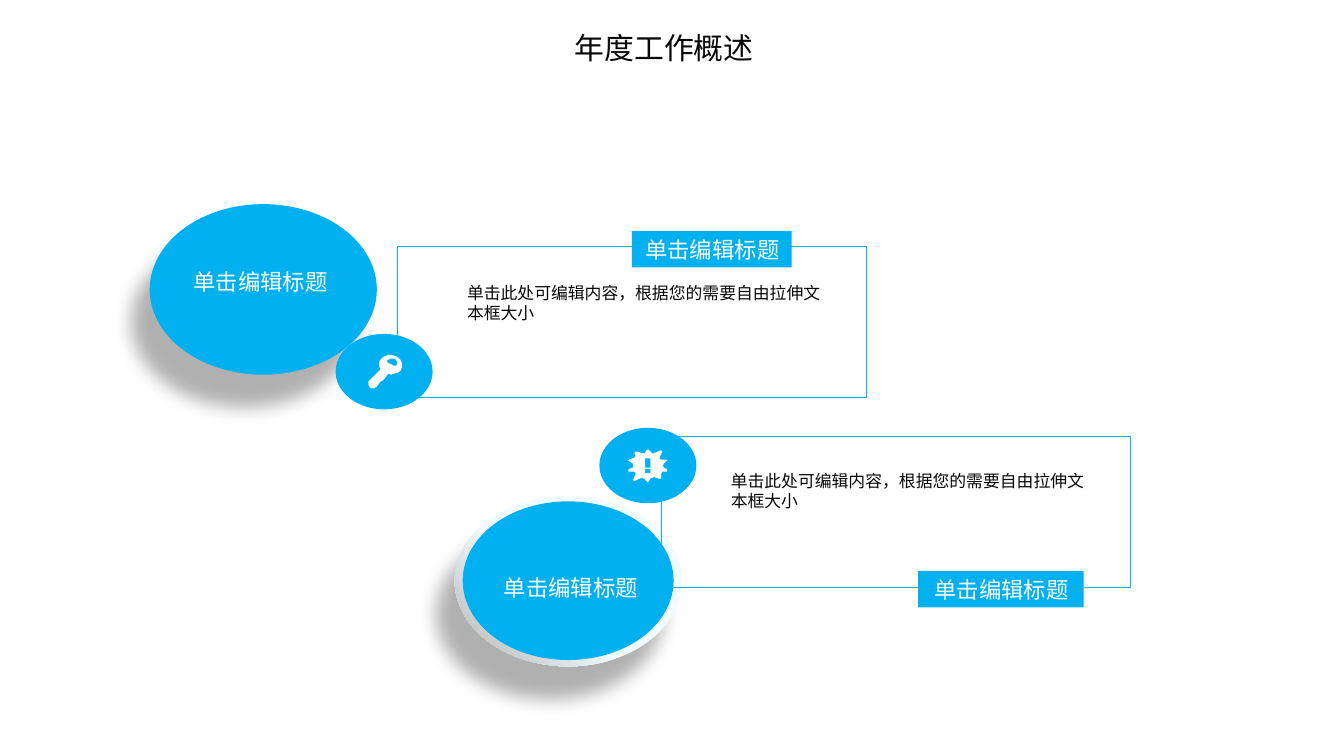
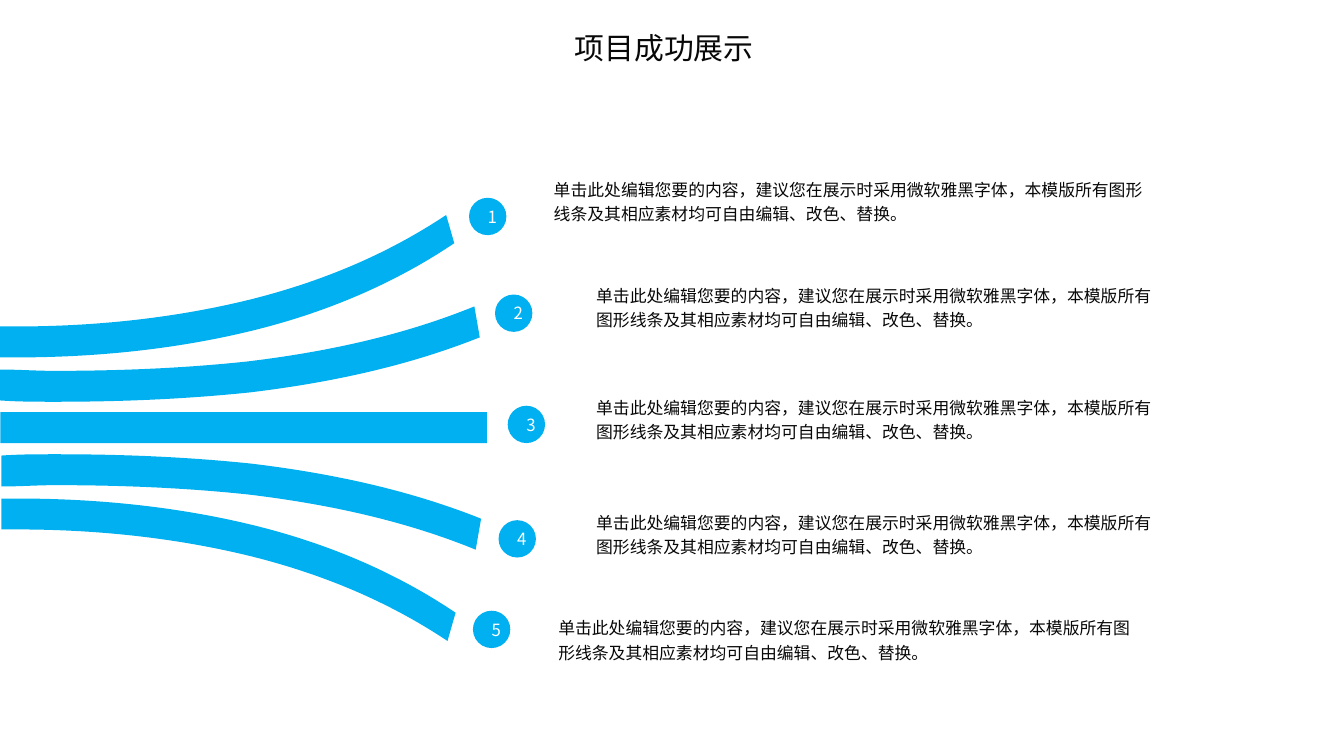
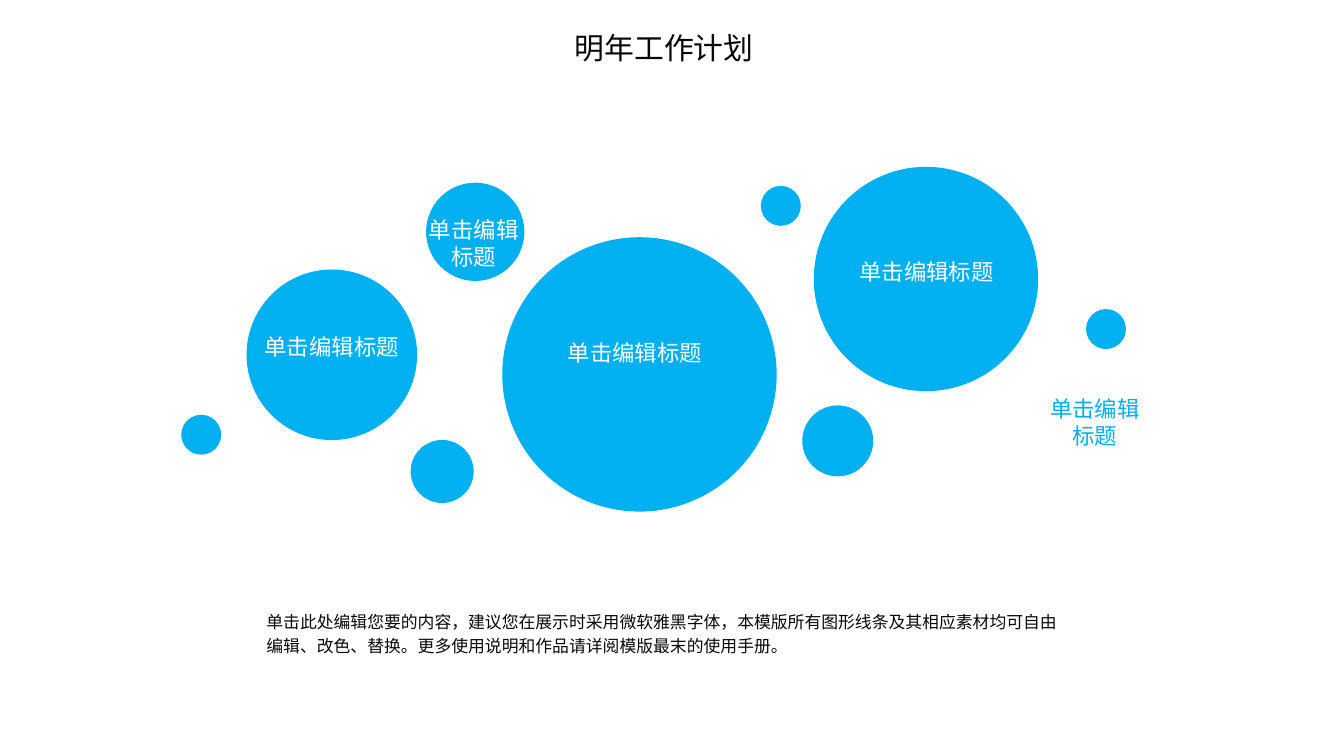
from copy import deepcopy
from dataclasses import dataclass

from lxml import etree
from pptx import Presentation
from pptx.dml.color import RGBColor
from pptx.enum.shapes import MSO_SHAPE
from pptx.enum.text import MSO_ANCHOR, MSO_AUTO_SIZE, PP_ALIGN
from pptx.oxml.ns import qn
from pptx.util import Pt

OVAL, RECTANGLE = MSO_SHAPE.OVAL, MSO_SHAPE.RECTANGLE
TOP, MIDDLE = MSO_ANCHOR.TOP, MSO_ANCHOR.MIDDLE
LEFT, CENTER = PP_ALIGN.LEFT, PP_ALIGN.CENTER
GROW, FIXED = MSO_AUTO_SIZE.SHAPE_TO_FIT_TEXT, MSO_AUTO_SIZE.NONE


@dataclass(frozen=True)
class Theme:
    """Colours, fonts and type sizes that the slides share."""

    accent: str = "00B0F0"
    ink: str = "080808"
    paper: str = "FFFFFF"
    rim: tuple = ((57, "F2FBFF"), (92, "BFBFBF"), (100, "A6A6A6"))
    font: str = "Noto Sans CJK SC"
    label_font: str = "Lato"
    tag_font: str = "Arial"
    title_size: int = 16
    label_size: int = 12
    body_size: int = 9


THEME = Theme()
GRID = 0.72
MIRROR = 637
PLAIN = (7.2, 3.6, 7.2, 3.6)
LABEL = "单击编辑标题"
INTRO = "单击此处可编辑内容，根据您的需要自由拉伸文本框大小"
ADVICE = "单击此处编辑您要的内容，建议您在展示时采用微软雅黑字体，本模版所有图形线条及其相应素材均可自由编辑、改色、替换。"
MANUAL = "更多使用说明和作品请详阅模版最末的使用手册。"

TITLE = dict(size=THEME.title_size)
INTRO_BODY = dict(spaced=True, insets=(5.8, 2.9, 5.8, 2.9))
ADVICE_BODY = dict(spaced=True, leading=1.2)
CIRCLE_LABEL = dict(size=THEME.label_size, font=THEME.label_font, color=THEME.paper, spaced=True)
TAG = dict(size=THEME.label_size, font=THEME.tag_font, color=THEME.paper, spaced=True,
           align=CENTER, anchor=MIDDLE, grow=FIXED, insets=(6.5, 3.6, 5.8, 3.6))
NUMBER = dict(color=THEME.paper, align=CENTER, anchor=MIDDLE, grow=FIXED)
BUBBLE_LABEL = dict(size=THEME.label_size, color=THEME.paper, align=CENTER)

KEY = [
    [(21, 8), (20, 9, 18, 8, 17, 7), (15, 6, 13, 6, 14, 4), (16, 3, 18, 2, 20, 3),
     (22, 4, 22, 6, 21, 8)],
    [(25, 6), (24, 2, 20, 0, 15, 0), (11, 1, 7, 4, 8, 8), (8, 9, 8, 10, 9, 11), (0, 20),
     (0, 21, 0, 21, 0, 22), (1, 24), (1, 25, 1, 25, 2, 25), (4, 25), (5, 25, 5, 24, 6, 24),
     (9, 20), (11, 19), (15, 14), (16, 15, 18, 15, 19, 14), (24, 14, 26, 10, 25, 6)],
]
BURST = [
    [(17, 14), (13, 14), (13, 7), (17, 7)],
    [(17, 18), (13, 18), (13, 15), (17, 15)],
    [(29, 15), (27, 14), (26, 13, 26, 12, 27, 11), (29, 9), (30, 9, 30, 8, 29, 8),
     (25, 8), (24, 8, 23, 7, 24, 6), (26, 2), (26, 1, 26, 1, 25, 1),
     (20, 3), (19, 4, 18, 4, 18, 3), (16, 1), (16, 0, 15, 0, 14, 1),
     (13, 3), (12, 3, 11, 4, 10, 3), (7, 2), (6, 2, 5, 2, 5, 3),
     (6, 5), (6, 6, 5, 7, 4, 7), (1, 8), (0, 8, 0, 9, 1, 9),
     (4, 11), (4, 12, 4, 13, 4, 14), (1, 15), (0, 16, 0, 17, 1, 17),
     (5, 17), (6, 17, 6, 18, 6, 19), (4, 23), (4, 24, 4, 24, 5, 24),
     (9, 22), (10, 21, 12, 22, 12, 22), (14, 24), (15, 25, 15, 25, 16, 24),
     (17, 22), (18, 21, 19, 21, 20, 21), (23, 22), (24, 23, 25, 22, 25, 22),
     (25, 19), (25, 19, 25, 18, 26, 17), (29, 17), (30, 17, 30, 16, 29, 15)],
]
INNER_ARM = [(353, 228), (299, 250, 242, 262, 184, 269), (137, 274, 89, 276, 40, 276),
             (27, 276, 14, 275, 0, 275), (0, 298), (14, 299, 27, 299, 41, 299),
             (90, 299, 138, 297, 186, 292), (244, 285, 302, 273, 357, 251)]
OUTER_ARM = [(332, 160), (287, 190, 238, 210, 186, 223), (129, 237, 70, 243, 12, 243), (0, 243),
             (0, 266), (12, 266), (71, 266, 131, 260, 188, 246), (241, 233, 292, 212, 338, 181)]


def write(frame, text, size=THEME.body_size, font=THEME.font, color=THEME.ink, align=LEFT,
          anchor=TOP, grow=GROW, wrap=True, insets=PLAIN, leading=None, spaced=False):
    """Fill a text frame with one formatted paragraph."""
    settings = dict(word_wrap=wrap, auto_size=grow, vertical_anchor=anchor)
    for side, inset in zip(("left", "top", "right", "bottom"), insets):
        settings["margin_" + side] = Pt(inset)
    for name, value in settings.items():
        setattr(frame, name, value)
    para = frame.paragraphs[0]
    para.alignment = align
    if leading:
        para.line_spacing = leading
    if spaced:
        before = etree.SubElement(para._p.get_or_add_pPr(), qn("a:spcBef"))
        etree.SubElement(before, qn("a:spcPct"), val="20000")
    span = para.add_run()
    span.text = text
    for name, value in dict(size=Pt(size), name=font).items():
        setattr(span.font, name, value)
    span.font.color.rgb = RGBColor.from_string(color)
    etree.SubElement(span._r.get_or_add_rPr(), qn("a:ea"), typeface=font)


def add_page(deck, title):
    """Add a title-only slide with its title in place."""
    page = deck.slides.add_slide(deck.slide_layouts[5])
    box = page.shapes.title
    for name, value in dict(left=300.7, top=12.2, width=116, height=26.6).items():
        setattr(box, name, Pt(value))
    write(box.text_frame, title, **TITLE)
    return page


def add_text(page, place, text, **look):
    """Add a text box at left, top, width, height."""
    box = page.shapes.add_textbox(*map(Pt, place))
    write(box.text_frame, text, **look)


def paint(shape, fill):
    """Give a shape a flat fill, with no line or shadow."""
    shape.shadow.inherit = False
    shape.line.fill.background()
    shape.fill.solid()
    shape.fill.fore_color.rgb = RGBColor.from_string(fill)


def add_solid(page, kind, place, text=None, **look):
    """Add an accent-coloured preset shape, with text if given."""
    shape = page.shapes.add_shape(kind, *map(Pt, place))
    paint(shape, THEME.accent)
    if text:
        write(shape.text_frame, text, **look)
    return shape


def add_frame(page, place):
    """Add a hollow rectangle with a hairline."""
    frame = add_solid(page, RECTANGLE, place)
    frame.fill.background()
    frame.line.color.rgb = RGBColor.from_string(THEME.accent)
    frame.line.width = Pt(0.25)


def cast_shadow(shape):
    """Add a soft shadow falling to the lower left."""
    effects = shape._element.spPr.find(qn("a:effectLst"))
    shadow = etree.SubElement(effects, qn("a:outerShdw"), blurRad=str(Pt(10)), dist=str(Pt(20)),
                              dir=str(120 * 60000), algn="ctr", rotWithShape="0")
    color = etree.SubElement(shadow, qn("a:srgbClr"), val="000000")
    etree.SubElement(color, qn("a:alpha"), val="31000")


def shade_rim(shape):
    """Fill a shape with the pale-to-grey rim gradient."""
    shape.fill.gradient()
    shape.fill.gradient_angle = 225
    stops = shape._element.spPr.find(qn("a:gradFill")).find(qn("a:gsLst"))
    stops.append(deepcopy(stops[0]))
    for stop, (position, color) in zip(stops, THEME.rim):
        stop.set("pos", str(position * 1000))
        stop.remove(stop[0])
        etree.SubElement(stop, qn("a:srgbClr"), val=color)


def add_big_circle(page, left, top, rimmed=False):
    """Add a shadowed oval with a smaller oval on it."""
    base = add_solid(page, OVAL, (left, top, 121.7, 91.4))
    if rimmed:
        shade_rim(base)
    cast_shadow(base)
    add_solid(page, OVAL, (left + 4.3, top + 3, 113, 85))


def add_outline(page, contours, fill, left=0, top=0):
    """Add a freeform of lines (x, y) and cubic curves (six numbers) on the grid."""
    def place(x, y):
        return Pt(left + x * GRID), Pt(top + y * GRID)

    builder = None
    for contour in contours:
        start, *rest = [place(*segment[-2:]) for segment in contour]
        if builder:
            builder.move_to(*start)
        else:
            builder = page.shapes.build_freeform(*start)
        builder.add_line_segments(rest, close=True)
    shape = builder.convert_to_shape()
    paint(shape, fill)
    segments = [segment for contour in contours for segment in contour[1:]]
    for line, segment in zip(list(shape._element.iter(qn("a:lnTo"))), segments):
        if len(segment) == 6:
            curve = etree.Element(qn("a:cubicBezTo"))
            for index in (0, 2, 4):
                x, y = place(*segment[index:index + 2])
                etree.SubElement(curve, qn("a:pt"), x=str(x - shape.left), y=str(y - shape.top))
            line.getparent().replace(line, curve)


def flip(contour):
    """Mirror a contour top to bottom, one grid step to the right."""
    return [tuple(MIRROR - value if index % 2 else value + 1
                  for index, value in enumerate(segment)) for segment in contour]


def add_badge(page, left, top, icon, icon_left, icon_top):
    """Add a small oval with a white icon."""
    add_solid(page, OVAL, (left, top, 52, 40.4))
    add_outline(page, icon, THEME.paper, icon_left, icon_top)


def build_overview(deck):
    """Build the yearly overview with two captioned circles."""
    page = add_page(deck, "年度工作概述")
    add_big_circle(page, 80.2, 109.4)
    add_text(page, (96.5, 140, 89.3, 21.6), LABEL, **CIRCLE_LABEL)
    add_big_circle(page, 243.6, 265.6, rimmed=True)
    add_text(page, (262.8, 304.1, 87.1, 21.6), LABEL, wrap=False, **CIRCLE_LABEL)
    for left, top in ((213, 132), (354.4, 233.8)):
        add_frame(page, (left, top, 251.3, 80.8))
    add_badge(page, 321.1, 229.2, BURST, 336.2, 240.5)
    add_badge(page, 179.8, 178.9, KEY, 197.3, 190.1)
    for left, top in ((244.4, 148.3), (385.7, 249.1)):
        add_text(page, (left, top, 204.5, 28.1), INTRO, **INTRO_BODY)
    for place in ((338.6, 123.8, 85.5, 19.5), (491.9, 306, 88.7, 19.5)):
        add_solid(page, RECTANGLE, place, LABEL, **TAG)


def build_results(deck):
    """Build the five fanned arms with numbered notes."""
    page = add_page(deck, "项目成功展示")
    add_solid(page, RECTANGLE, (0.2, 220.8, 260.6, 16.6))
    for arm in (INNER_ARM, OUTER_ARM):
        for contour in (arm, flip(arm)):
            add_outline(page, [contour], THEME.accent)
    notes = ((289.6, 90.3, 334.1), (312.3, 147.4, 311.6), (312.3, 207.1, 311.6),
             (312.3, 268.9, 311.6), (292, 325.4, 326.4))
    for left, top, width in notes:
        add_text(page, (left, top, width, 32.4), ADVICE, **ADVICE_BODY)
    dots = ((251.3, 106), (265.2, 157.8), (272, 217.4), (267.1, 278.7), (253.4, 327.2))
    for number, (left, top) in enumerate(dots, 1):
        add_solid(page, OVAL, (left, top, 20, 20), str(number), **NUMBER)


def build_plan(deck):
    """Build the bubbles of next year's plan."""
    page = add_page(deck, "明年工作计划")
    bubbles = ((269.1, 127.1, 147), (132.1, 144.4, 91.4), (436, 89.4, 120.2),
               (220, 235.7, 33.8), (228.3, 97.9, 52.6), (407.6, 99.6, 21.4),
               (429.8, 217.2, 38), (97.1, 222.2, 21.4), (581.8, 165.6, 21.4))
    for left, top, size in bubbles:
        add_solid(page, OVAL, (left, top, size, size))
    labels = ((128.5, 175, 98.6, 21.6), (262.4, 178.2, 155.5, 21.6),
              (447.1, 134.6, 98.6, 21.6), (222.1, 112.3, 63.4, 36))
    for place in labels:
        add_text(page, place, LABEL, **BUBBLE_LABEL)
    add_text(page, (554.8, 208.1, 63.4, 36), LABEL, **{**BUBBLE_LABEL, "color": THEME.accent})
    add_text(page, (135.6, 322, 440.6, 32.4), ADVICE + MANUAL, **ADVICE_BODY)


def main():
    """Build and save the deck."""
    deck = Presentation()
    deck.slide_width, deck.slide_height = Pt(720), Pt(405)
    for build in (build_overview, build_results, build_plan):
        build(deck)
    deck.save("out.pptx")


if __name__ == "__main__":
    main()
